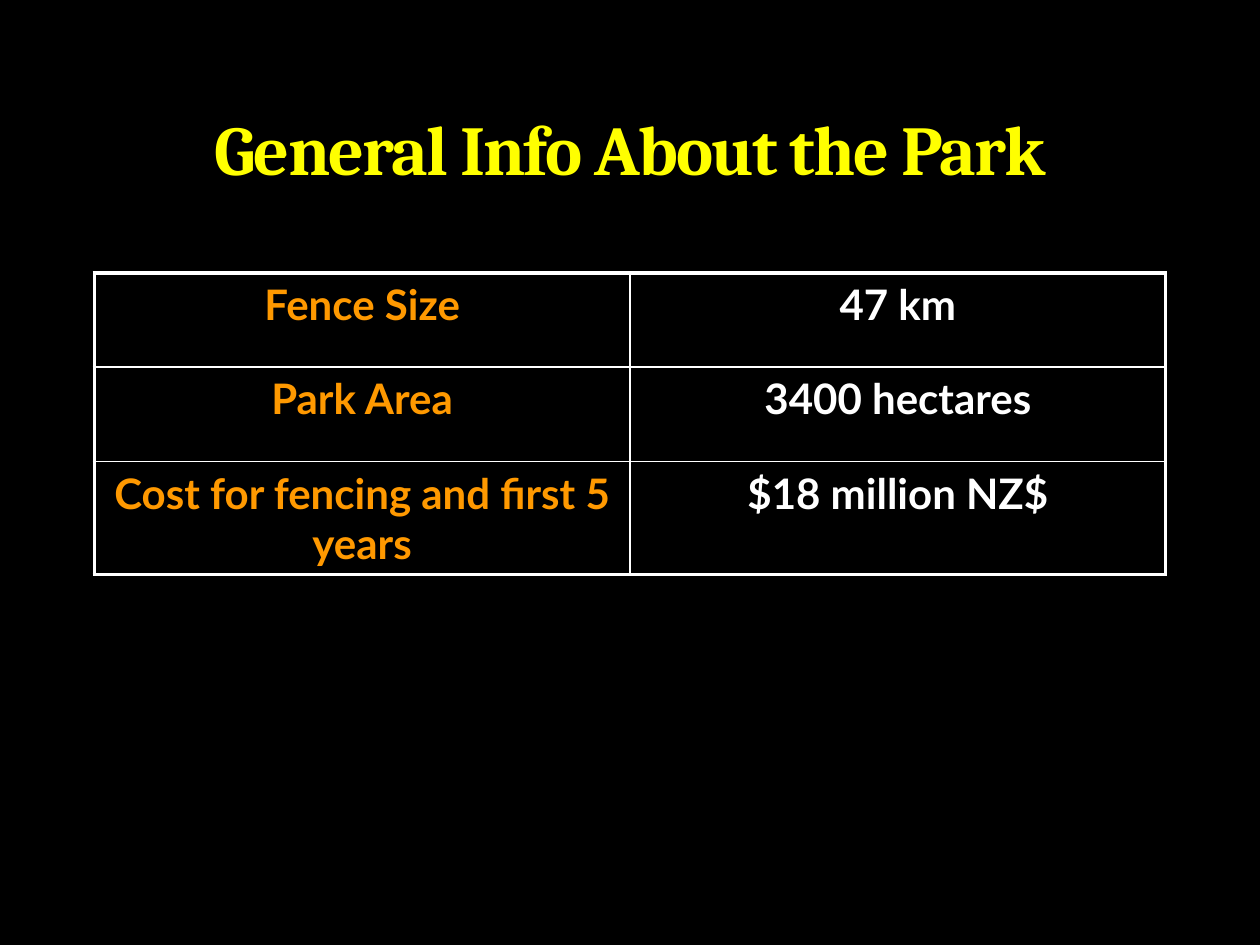
from lxml.etree import SubElement
from pptx import Presentation
from pptx.dml.color import RGBColor
from pptx.enum.text import MSO_ANCHOR, PP_ALIGN
from pptx.oxml.ns import qn
from pptx.util import Cm, Pt

TITLE = "General Info About the Park"
FACTS = [
    ("Fence Size", "47 km"),
    ("Park Area", "3400 hectares"),
    ("Cost for fencing and first 5 years", "$18 million NZ$"),
]

BLACK = RGBColor(0x00, 0x00, 0x00)
WHITE = RGBColor(0xFF, 0xFF, 0xFF)
YELLOW = RGBColor(0xFF, 0xFF, 0x00)
ORANGE = RGBColor(0xFF, 0x99, 0x00)
FACT_COLORS = (ORANGE, WHITE)

OUTER, INNER = Pt(2.25), Pt(1)
COLUMN_WIDTH, ROW_HEIGHT = Cm(10.8), Cm(1.9)


def format_paragraph(paragraph, font_name, size, color):
    paragraph.alignment = PP_ALIGN.CENTER
    font = paragraph.runs[0].font
    font.name, font.size, font.bold = font_name, size, True
    font.color.rgb = color


def add_border(cell, side, width):
    line = SubElement(cell._tc.get_or_add_tcPr(), qn(f"a:ln{side}"), w=str(width))
    fill = SubElement(line, qn("a:solidFill"))
    SubElement(fill, qn("a:srgbClr"), val=str(WHITE))


def space_before(paragraph, percent):
    """Set the space before as a share of the line height."""
    spacing = SubElement(paragraph._p.get_or_add_pPr(), qn("a:spcBef"))
    SubElement(spacing, qn("a:spcPct"), val=str(percent * 1000))


def add_title(slide):
    title = slide.shapes.title
    title.left, title.top, title.width, title.height = Cm(1.27), Cm(0.76), Cm(22.86), Cm(3.18)
    frame = title.text_frame
    frame.text = TITLE
    frame.vertical_anchor = MSO_ANCHOR.BOTTOM
    paragraph = frame.paragraphs[0]
    format_paragraph(paragraph, "Cambria", Pt(40), YELLOW)
    paragraph.runs[0].font._element.set("spc", "-100")


def add_facts(slide):
    rows, columns = len(FACTS), len(FACTS[0])
    table = slide.shapes.add_table(
        rows, columns, Cm(1.9), Cm(5.5), COLUMN_WIDTH * columns, ROW_HEIGHT * rows
    ).table
    for r, fact in enumerate(FACTS):
        for c, text in enumerate(fact):
            cell = table.cell(r, c)
            cell.text = text
            paragraph = cell.text_frame.paragraphs[0]
            format_paragraph(paragraph, "Lato", Pt(24), FACT_COLORS[c])
            space_before(paragraph, 20)
            on_edge = {"L": c == 0, "R": c == columns - 1, "T": r == 0, "B": r == rows - 1}
            for side, outer in on_edge.items():
                add_border(cell, side, OUTER if outer else INNER)
            cell.fill.solid()
            cell.fill.fore_color.rgb = BLACK


def main():
    deck = Presentation()
    deck.slide_width, deck.slide_height = Cm(25.4), Cm(19.05)
    slide = deck.slides.add_slide(deck.slide_layouts[5])
    slide.background.fill.solid()
    slide.background.fill.fore_color.rgb = BLACK
    add_title(slide)
    add_facts(slide)
    deck.save("out.pptx")


if __name__ == "__main__":
    main()
